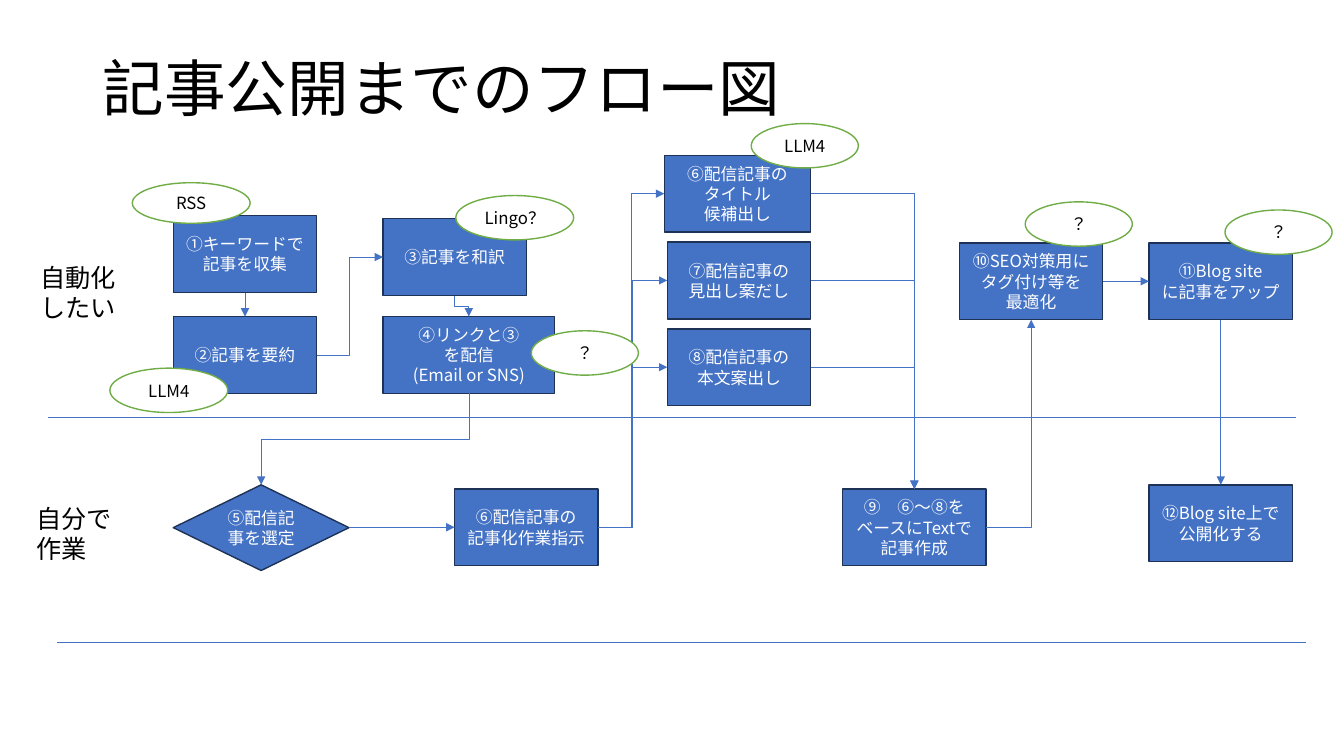
from lxml import etree
from pptx import Presentation
from pptx.dml.color import RGBColor
from pptx.enum.shapes import MSO_CONNECTOR, MSO_SHAPE
from pptx.enum.text import MSO_ANCHOR, MSO_AUTO_SIZE, PP_ALIGN
from pptx.oxml.ns import qn
from pptx.util import Pt

RECTANGLE = MSO_SHAPE.RECTANGLE
DECISION = MSO_SHAPE.FLOWCHART_DECISION
OVAL = MSO_SHAPE.OVAL
ELBOW = MSO_CONNECTOR.ELBOW
STRAIGHT = MSO_CONNECTOR.STRAIGHT
CENTER = PP_ALIGN.CENTER
LEFT = PP_ALIGN.LEFT
MIDDLE = MSO_ANCHOR.MIDDLE
TOP = MSO_ANCHOR.TOP

FONT = "Noto Sans CJK JP"
COLORS = {
    "box": "4472C4",
    "box_edge": "1E3256",
    "tool": "FFFFFF",
    "tool_edge": "70AD47",
    "flow": "4472C4",
    "light": "FFFFFF",
    "dark": "000000",
}

TOP_SITE, LEFT_SITE, BOTTOM_SITE, RIGHT_SITE = range(4)
BOX_WIDTH, BOX_HEIGHT = 102.4, 54.9
DRAFT_TOP, DRAFT_STEP = 110.9, 62

STEPS = {
    "collect": ("①キーワードで記事を収集", 123.8, 154.1),
    "summarize": ("②記事を要約", 123.8, 226.1),
    "translate": ("③記事を和訳", 273.6, 156.2),
    "deliver": ("④リンクと③\nを配信\v(Email or SNS)", 273.6, 226.1, 122.6),
    "select": ("⑤配信記事を選定", 123.8, 346.3, 125.5, 61.2, DECISION),
    "instruct": ("⑥配信記事の\n記事化作業指示", 324.7, 349.2),
    "titles": ("⑥配信記事の\nタイトル\n候補出し", 474.5, DRAFT_TOP, 104.6),
    "headings": ("⑦配信記事の\n見出し案だし", 476.7, DRAFT_TOP + DRAFT_STEP),
    "body": ("⑧配信記事の\n本文案出し", 476.7, DRAFT_TOP + 2 * DRAFT_STEP),
    "write": ("⑨　⑥～⑧をベースにTextで記事作成", 601.9, 349.2),
    "optimize": ("⑩SEO対策用に\vタグ付け等を\n最適化", 685.4, 173.5),
    "upload": ("⑪Blog site\vに記事をアップ", 820.8, 173.5),
    "publish": ("⑫Blog site上で公開化する", 820.8, 346.3),
}

DOWNWARD = [
    ("collect", "summarize"),
    ("translate", "deliver"),
    ("deliver", "select"),
    ("upload", "publish"),
]
SIDEWAYS = [
    ("summarize", "translate"),
    ("select", "instruct"),
    ("instruct", "body"),
    ("instruct", "headings"),
    ("instruct", "titles"),
    ("optimize", "upload"),
]
CORNERS = [
    ("titles", "write", TOP_SITE),
    ("headings", "write", TOP_SITE),
    ("body", "write", TOP_SITE),
    ("write", "optimize", BOTTOM_SITE),
]

TOOLS = [
    ("RSS", 94.5, 130.5, 84.2, 29),
    ("LLM4", 78.5, 263, 84.2, 31.7),
    ("Lingo？", 325.6, 139.7, 84.2, 31.7),
    ("？", 379.5, 236.3, 76.5, 31.7),
    ("LLM4", 536.6, 88.3, 76.5, 31.7),
    ("？", 732.3, 144.2, 76.5, 31.7),
    ("？", 875, 150, 76.5, 31.7),
]


def rgb(name):
    return RGBColor.from_string(COLORS[name])


def write_text(frame, text, size=12, color="dark", align=CENTER, anchor=MIDDLE, spacing=None):
    frame.word_wrap = True
    frame.auto_size = MSO_AUTO_SIZE.NONE
    frame.vertical_anchor = anchor
    for index, content in enumerate(text.split("\n")):
        paragraph = frame.add_paragraph() if index else frame.paragraphs[0]
        paragraph.alignment = align
        if spacing:
            paragraph.line_spacing = spacing
        for line_index, line in enumerate(content.split("\v")):
            if line_index:
                paragraph.add_line_break()
            run = paragraph.add_run()
            run.text = line
            run.font.size = Pt(size)
            run.font.name = FONT
            run.font.color.rgb = rgb(color)
            east_asian = etree.SubElement(run.font._element, qn("a:ea"))
            east_asian.set("typeface", FONT)


def add_title(slide, text):
    title = slide.shapes.title
    title.left, title.top, title.width, title.height = Pt(66.2), Pt(28.8), Pt(828), Pt(72.7)
    write_text(title.text_frame, text, size=44, align=LEFT, spacing=0.9)


def add_filled(slide, kind, bounds, text, style, color):
    shape = slide.shapes.add_shape(kind, *map(Pt, bounds))
    shape.shadow.inherit = False
    shape.fill.solid()
    shape.fill.fore_color.rgb = rgb(style)
    shape.line.color.rgb = rgb(style + "_edge")
    shape.line.width = Pt(1)
    write_text(shape.text_frame, text, color=color)
    return shape


def add_step(slide, text, left, top, width=BOX_WIDTH, height=BOX_HEIGHT, kind=RECTANGLE):
    return add_filled(slide, kind, (left, top, width, height), text, "box", "light")


def add_label(slide, text, left, top):
    label = slide.shapes.add_textbox(Pt(left), Pt(top), Pt(84.2), Pt(51))
    write_text(label.text_frame, text, size=18, align=LEFT, anchor=TOP)


def add_line(slide, kind, *ends):
    connector = slide.shapes.add_connector(kind, *map(Pt, ends))
    connector.line.color.rgb = rgb("flow")
    connector.line.width = Pt(0.5)
    etree.SubElement(connector.element.spPr, qn("a:effectLst"))
    return connector


def add_arrow(slide, source, source_site, target, target_site):
    connector = add_line(slide, ELBOW, 0, 0, 0, 0)
    connector.begin_connect(source, source_site)
    connector.end_connect(target, target_site)
    line = connector.element.spPr.find(qn("a:ln"))
    etree.SubElement(line, qn("a:tailEnd")).set("type", "triangle")
    return connector


def add_downward_arrow(slide, source, target):
    connector = add_arrow(slide, source, BOTTOM_SITE, target, TOP_SITE)
    goes_right = connector.end_x > connector.begin_x
    width, height = connector.width, connector.height
    left = connector.left + (width - height) // 2
    top = connector.top + (height - width) // 2
    connector.left, connector.top = left, top
    connector.width, connector.height = height, width
    transform = connector.element.spPr.find(qn("a:xfrm"))
    transform.set("rot", "16200000" if goes_right else "5400000")
    transform.set("flipH", "1" if goes_right else "0")


def add_corner_arrow(slide, source, target, target_site):
    connector = add_arrow(slide, source, RIGHT_SITE, target, target_site)
    connector.element.spPr.find(qn("a:prstGeom")).set("prst", "bentConnector2")


def main():
    presentation = Presentation()
    presentation.slide_width, presentation.slide_height = Pt(960), Pt(540)
    slide = presentation.slides.add_slide(presentation.slide_layouts[5])
    add_title(slide, "記事公開までのフロー図")
    add_line(slide, STRAIGHT, 34, 298.3, 926, 298.3)
    add_line(slide, STRAIGHT, 41, 458.8, 933, 458.8)
    steps = {name: add_step(slide, *details) for name, details in STEPS.items()}
    for source, target in DOWNWARD:
        add_downward_arrow(slide, steps[source], steps[target])
    for source, target in SIDEWAYS:
        add_arrow(slide, steps[source], RIGHT_SITE, steps[target], LEFT_SITE)
    for source, target, site in CORNERS:
        add_corner_arrow(slide, steps[source], steps[target], site)
    add_label(slide, "自動化したい", 21.8, 183.8)
    add_label(slide, "自分で作業", 18.8, 355.8)
    for text, *bounds in TOOLS:
        add_filled(slide, OVAL, bounds, text, "tool", "dark")
    presentation.save("out.pptx")


if __name__ == "__main__":
    main()
